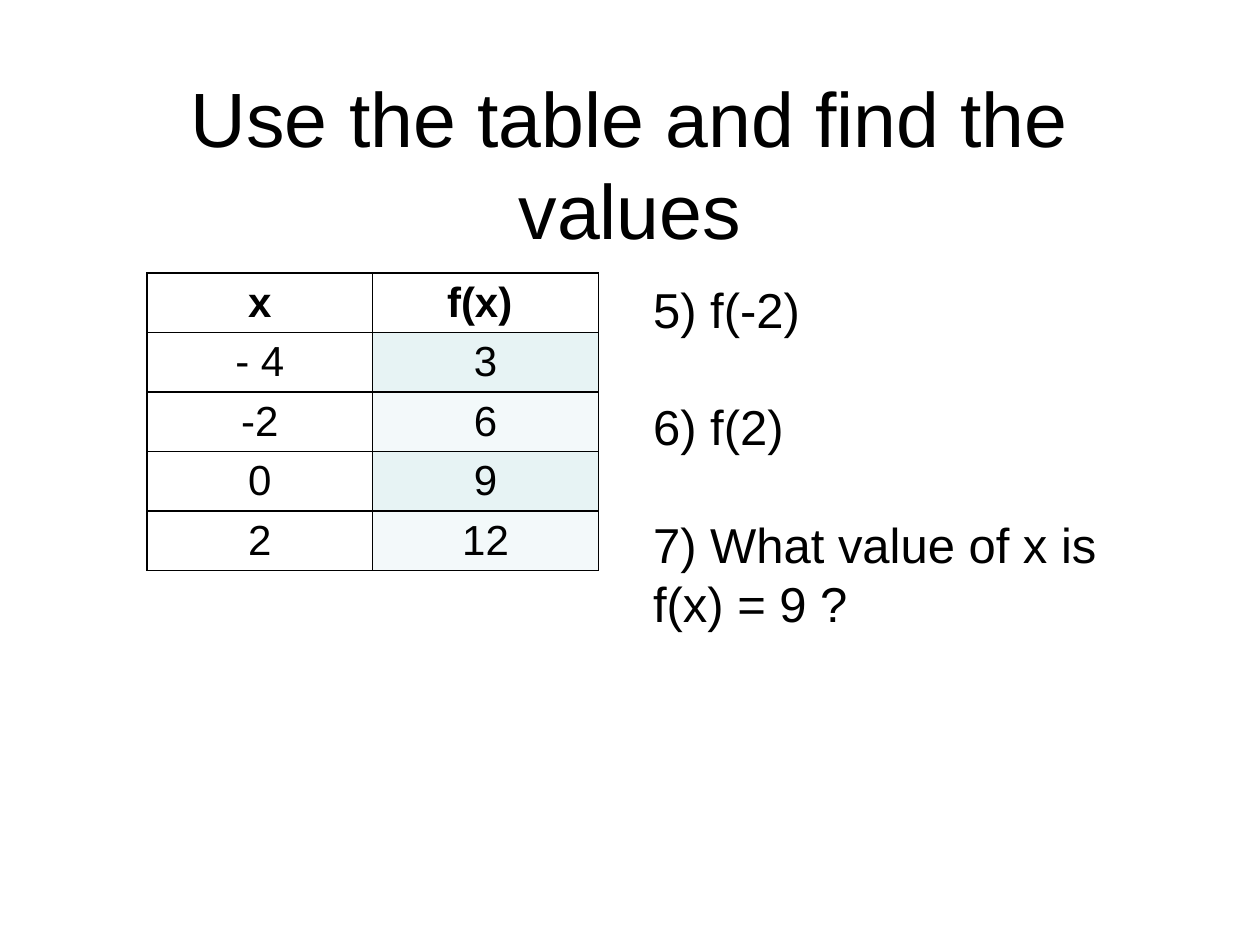
from lxml import etree
from pptx import Presentation
from pptx.dml.color import RGBColor
from pptx.enum.text import MSO_ANCHOR, MSO_AUTO_SIZE, PP_ALIGN
from pptx.oxml.ns import qn
from pptx.util import Pt

CENTER, LEFT = PP_ALIGN.CENTER, PP_ALIGN.LEFT
TOP, MIDDLE = MSO_ANCHOR.TOP, MSO_ANCHOR.MIDDLE
NO_AUTOFIT = MSO_AUTO_SIZE.NONE

FONT = "Arial"
BLACK = RGBColor(0x00, 0x00, 0x00)
BAND_DARK = RGBColor(0xE7, 0xF3, 0xF4)
BAND_LIGHT = RGBColor(0xF3, 0xF9, 0xFA)

TITLE = "Use the table and find the values"
VALUES = [("x", "f(x) "), ("- 4", "3"), ("-2", "6"), ("0", "9"), ("2", "12")]
QUESTIONS = ["5) f(-2)", "6) f(2)", "7) What value of x is f(x) = 9 ?"]


def format_paragraph(p, size, align, bold=False):
    p.alignment = align
    for r in p.runs:
        r.font.name = FONT
        r.font.size = Pt(size)
        r.font.bold = bold
        r.font.color.rgb = BLACK


def place(sp, box, anchor):
    sp.left, sp.top, sp.width, sp.height = (Pt(v) for v in box)
    tf = sp.text_frame
    tf.word_wrap = True
    tf.auto_size = NO_AUTOFIT
    tf.vertical_anchor = anchor
    return tf


def add_title(sp, box):
    tf = place(sp, box, MIDDLE)
    tf.text = TITLE
    format_paragraph(tf.paragraphs[0], 44, CENTER)


def add_questions(sp, box):
    tf = place(sp, box, TOP)
    tf.text = "\n".join(QUESTIONS)
    for p in tf.paragraphs:
        format_paragraph(p, 28, LEFT)
        p.space_before = Pt(0)
        p.space_after = Pt(33.6)
        pPr = p._p.get_or_add_pPr()
        pPr.set("marL", "0")
        pPr.set("indent", "0")
        etree.SubElement(pPr, qn("a:buNone"))


def add_borders(cell):
    """Draw a thin black line on all four sides of the cell."""
    tcPr = cell._tc.get_or_add_tcPr()
    for i, side in enumerate(("lnL", "lnR", "lnT", "lnB")):
        ln = etree.Element(qn(f"a:{side}"), w=str(Pt(1)))
        fill = etree.SubElement(ln, qn("a:solidFill"))
        etree.SubElement(fill, qn("a:srgbClr"), val=str(BLACK))
        tcPr.insert(i, ln)


def add_value_table(slide, box):
    left, top, width, height = (Pt(v) for v in box)
    table = slide.shapes.add_table(len(VALUES), 2, left, top, width, height).table
    table.first_row = table.horz_banding = False
    for i, row in enumerate(VALUES):
        for j, text in enumerate(row):
            cell = table.cell(i, j)
            cell.text = text
            cell.margin_top = cell.margin_bottom = Pt(2.5)
            cell.vertical_anchor = MIDDLE
            format_paragraph(cell.text_frame.paragraphs[0], 24, CENTER, bold=i == 0)
            if i and j:
                cell.fill.solid()
                cell.fill.fore_color.rgb = BAND_DARK if i % 2 else BAND_LIGHT
            else:
                cell.fill.background()
            add_borders(cell)


def main():
    prs = Presentation()
    prs.slide_width, prs.slide_height = Pt(720), Pt(540)
    s = prs.slides.add_slide(prs.slide_layouts[1])
    add_title(s.shapes.title, (54, 48, 612, 90))
    add_value_table(s, (84, 156, 258, 170))
    add_questions(s.placeholders[1], (366, 156, 300, 324))
    prs.save("out.pptx")


if __name__ == "__main__":
    main()
